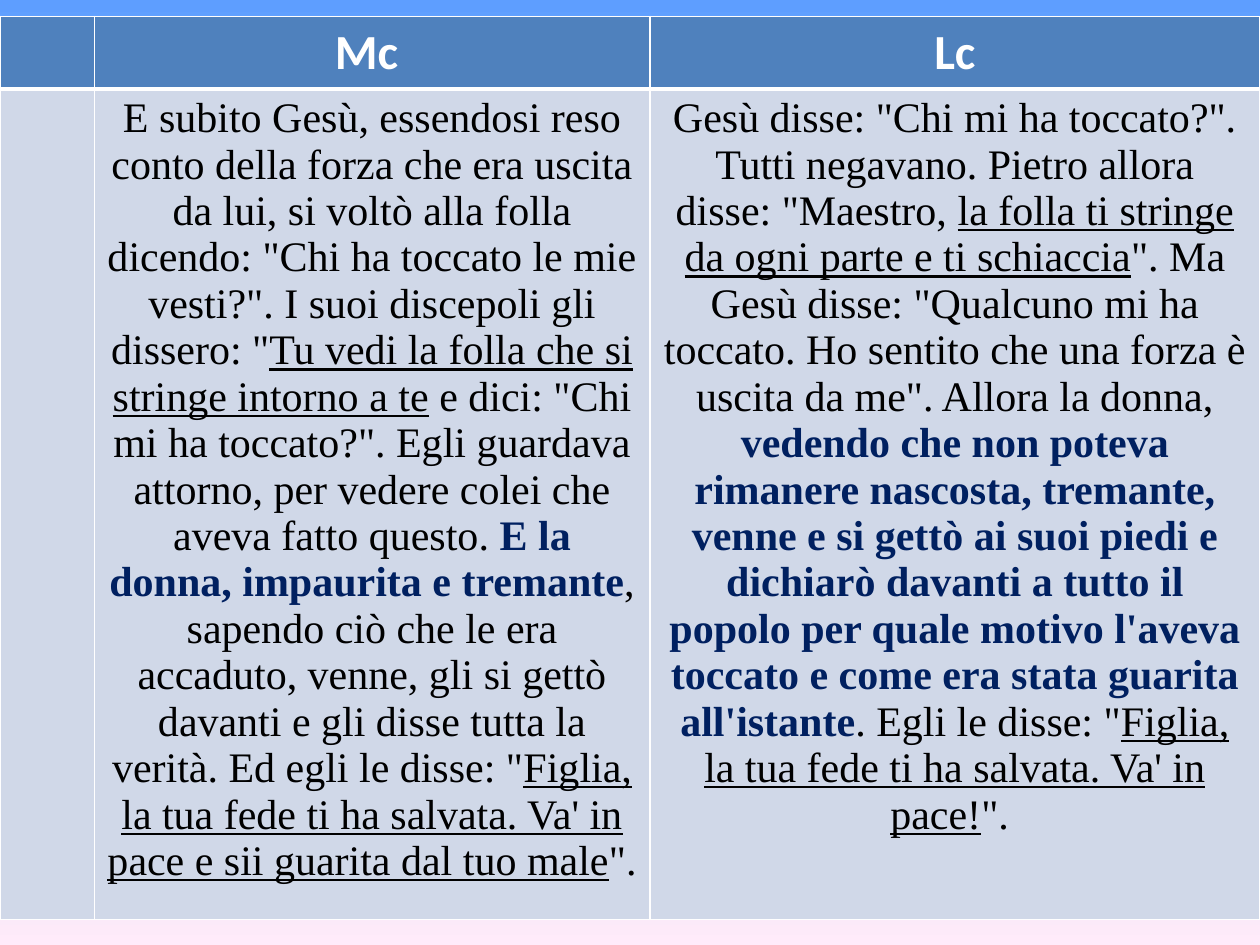
from dataclasses import dataclass

from lxml import etree
from pptx import Presentation
from pptx import util as u
from pptx.dml.color import RGBColor
from pptx.enum import text
from pptx.oxml.ns import qn


@dataclass(frozen=True)
class Theme:
    sky: tuple = ((0, "5E9EFF"), (26, "85C2FF"), (70, "C4D6EB"), (100, "FFEBFA"))
    head: str = "4F81BD"
    body: str = "D0D8E8"
    white: str = "FFFFFF"
    black: str = "000000"
    navy: str = "002060"
    title: str = "Calibri"
    serif: str = "Times New Roman"
    big: int = 28
    size: int = 24
    thin: int = 1
    thick: int = 3


# Kinds of run
PLAIN, UNDER, BOLD, HEAD = "plain", "under", "bold", "head"

MARK = [
    ("E subito Gesù, essendosi reso conto della forza che era uscita da lui, "
     "si voltò alla folla dicendo: \"Chi ha toccato le mie vesti?\". "
     "I suoi discepoli gli dissero: \"", PLAIN),
    ("Tu vedi la folla che si stringe intorno a te", UNDER),
    (" e dici: \"Chi mi ha toccato?\". Egli guardava attorno, "
     "per vedere colei che aveva fatto questo. ", PLAIN),
    ("E la donna, impaurita e tremante", BOLD),
    (", sapendo ciò che le era accaduto, venne, gli si gettò davanti "
     "e gli disse tutta la verità. Ed egli le disse: \"", PLAIN),
    ("Figlia, la tua fede ti ha salvata. Va' in pace e sii guarita "
     "dal tuo male", UNDER),
    ("\". ", PLAIN),
]
LUKE = [
    ("Gesù disse: \"Chi mi ha toccato?\". Tutti negavano. "
     "Pietro allora disse: \"Maestro, ", PLAIN),
    ("la folla ti stringe da ogni parte e ti schiaccia", UNDER),
    ("\". Ma Gesù disse: \"Qualcuno mi ha toccato. Ho sentito che una forza "
     "è uscita da me\". Allora la donna, ", PLAIN),
    ("vedendo che non poteva rimanere nascosta, tremante, venne e si gettò "
     "ai suoi piedi e dichiarò davanti a tutto il popolo per quale motivo "
     "l'aveva toccato e come era stata guarita all'istante", BOLD),
    (". Egli le disse: \"", PLAIN),
    ("Figlia, la tua fede ti ha salvata. Va' in pace!", UNDER),
    ("\". ", PLAIN),
]
ROWS = [
    [[], [("Mc ", HEAD)], [("Lc", HEAD)]],
    [[], MARK, LUKE],
]


class Deck:
    def __init__(self, theme):
        self.theme = theme
        self.file = Presentation()
        self.file.slide_width = u.Cm(25.4)
        self.file.slide_height = u.Cm(19.05)
        self.slide = self.file.slides.add_slide(self.file.slide_layouts[6])

    def sky(self):
        """Fill the background with the theme's gradient, top to bottom."""
        fill = self.slide.background.fill
        fill.gradient()
        fill.gradient_angle = 270
        stops = next(self.slide.element.iter(qn("a:gsLst")))
        for old in list(stops):
            stops.remove(old)
        for pos, tint in self.theme.sky:
            stop = etree.SubElement(stops, qn("a:gs"), pos=str(pos * 1000))
            etree.SubElement(stop, qn("a:srgbClr"), val=tint)

    def table(self, left, top, cols, highs, rows):
        frame = self.slide.shapes.add_table(
            len(rows), len(cols), u.Cm(left), u.Cm(top),
            u.Cm(sum(cols)), u.Cm(sum(highs)))
        grid = frame.table
        for col, wide in zip(grid.columns, cols):
            col.width = u.Cm(wide)
        for row, high in zip(grid.rows, highs):
            row.height = u.Cm(high)
        for i, row in enumerate(rows):
            for j, runs in enumerate(row):
                self.cell(grid.cell(i, j), runs, i == 0)

    def cell(self, cell, runs, top):
        look = self.theme
        heavy = "B" if top else "T"
        for side in "LRTB":
            self.edge(cell, side, look.thick if side == heavy else look.thin)
        cell.fill.solid()
        cell.fill.fore_color.rgb = RGBColor.from_string(
            look.head if top else look.body)
        para = cell.text_frame.paragraphs[0]
        para.alignment = text.PP_ALIGN.CENTER
        for words, kind in runs:
            self.run(para, words, kind)

    def edge(self, cell, side, wide):
        props = cell._tc.get_or_add_tcPr()
        line = etree.SubElement(props, qn("a:ln" + side), w=str(u.Pt(wide)))
        fill = etree.SubElement(line, qn("a:solidFill"))
        etree.SubElement(fill, qn("a:srgbClr"), val=self.theme.white)

    def run(self, para, words, kind):
        look = self.theme
        run = para.add_run()
        run.text = words
        font = run.font
        font.name = look.title if kind == HEAD else look.serif
        font.size = u.Pt(look.big if kind == HEAD else look.size)
        font.bold = kind in (BOLD, HEAD)
        font.underline = kind == UNDER
        tint = {HEAD: look.white, BOLD: look.navy}.get(kind, look.black)
        font.color.rgb = RGBColor.from_string(tint)


def main():
    deck = Deck(Theme())
    deck.sky()
    deck.table(0, 0.33, [1.9, 11.2, 12.3], [1.4, 16.74], ROWS)
    deck.file.save("out.pptx")


if __name__ == "__main__":
    main()
